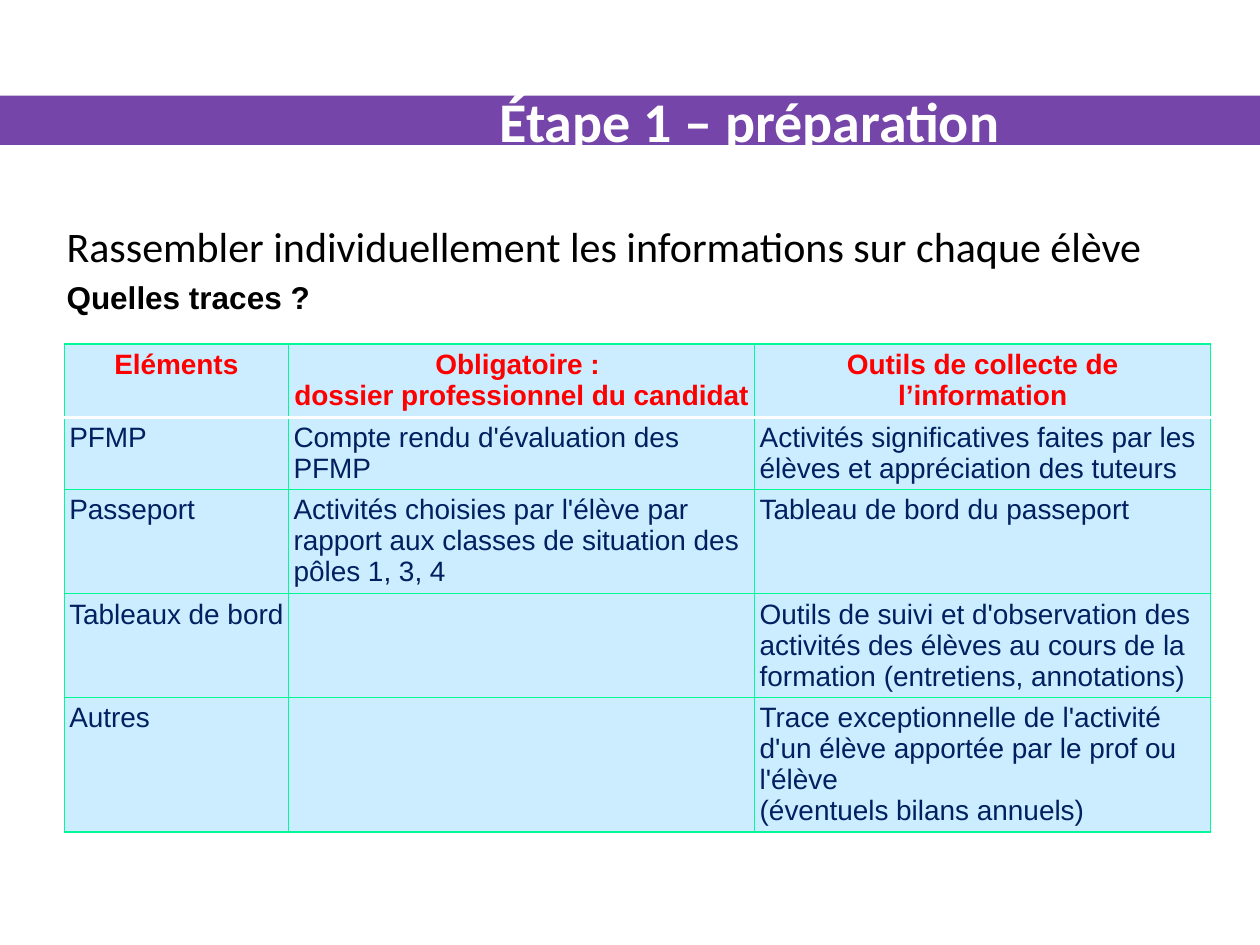
import pptx
import pptx.util
import pptx.dml.color
import pptx.enum.shapes
import pptx.enum.text
import pptx.oxml
import pptx.oxml.ns

Inches, Pt = pptx.util.Inches, pptx.util.Pt
RGB = pptx.dml.color.RGBColor
ALIGN = pptx.enum.text.PP_ALIGN
ANCHOR = pptx.enum.text.MSO_ANCHOR

PURPLE = RGB(0x75, 0x45, 0xA9)
WHITE = RGB(0xFF, 0xFF, 0xFF)
BLACK = RGB(0, 0, 0)
RED = RGB(0xFF, 0, 0)
NAVY = RGB(0, 0x20, 0x60)
PALE_BLUE = RGB(0xCC, 0xEC, 0xFF)
GREEN = RGB(0, 0xF9, 0x96)

TITLE = "Étape 1 – préparation"
INTRO = "Rassembler individuellement les informations sur chaque élève"
QUESTION = "Quelles traces ?"
ROWS = [
    ("Eléments", "Obligatoire : \vdossier professionnel du candidat",
     "Outils de collecte de l’information"),
    ("PFMP", "Compte rendu d'évaluation des PFMP",
     "Activités significatives faites par les élèves et appréciation des tuteurs"),
    ("Passeport",
     "Activités choisies par l'élève par rapport aux classes de situation des pôles 1, 3, 4",
     "Tableau de bord du passeport"),
    ("Tableaux de bord", "",
     "Outils de suivi et d'observation des activités des élèves au cours de la "
     "formation (entretiens, annotations)"),
    ("Autres", "",
     "Trace exceptionnelle de l'activité d'un élève apportée par le prof ou l'élève\n"
     "(éventuels bilans annuels)"),
]
COL_WIDTHS = (1.78, 3.7, 3.62)
ROW_HEIGHTS = (0.58, 0.57, 0.83, 0.82, 1.07)
TABLE_LEFT, TABLE_TOP = 0.51, 2.73
BAND_TOP, BAND_HEIGHT = 0.76, 0.39
CELL_MARGIN = 0.04


def style(tf, font, size, color, bold=False, align=ALIGN.LEFT):
    for p in tf.paragraphs:
        p.alignment = align
        p.font.size = Pt(size)
        for r in p.runs:
            r.font.name = font
            r.font.size = Pt(size)
            r.font.bold = bold
            r.font.color.rgb = color


def add_text(s, box, text, anchor=ANCHOR.TOP, **look):
    sp = s.shapes.add_textbox(*map(Inches, box))
    tf = sp.text_frame
    tf.word_wrap = True
    tf.vertical_anchor = anchor
    tf.text = text
    style(tf, **look)
    return sp


def set_borders(cell, borders):
    tcPr = cell._tc.get_or_add_tcPr()
    for i, (side, color, width) in enumerate(borders):
        tcPr.insert(i, pptx.oxml.parse_xml(
            f'<a:ln{side} {pptx.oxml.ns.nsdecls("a")} w="{Pt(width)}">'
            f'<a:solidFill><a:srgbClr val="{color}"/></a:solidFill></a:ln{side}>'))


def add_table(s):
    table = s.shapes.add_table(
        len(ROWS), len(COL_WIDTHS), Inches(TABLE_LEFT), Inches(TABLE_TOP),
        Inches(sum(COL_WIDTHS)), Inches(sum(ROW_HEIGHTS))).table
    for column, width in zip(table.columns, COL_WIDTHS):
        column.width = Inches(width)
    for i, (texts, height) in enumerate(zip(ROWS, ROW_HEIGHTS)):
        table.rows[i].height = Inches(height)
        header = i == 0
        for j, text in enumerate(texts):
            cell = table.cell(i, j)
            cell.margin_left = cell.margin_right = Inches(CELL_MARGIN)
            cell.margin_top = cell.margin_bottom = Inches(CELL_MARGIN)
            cell.fill.solid()
            cell.fill.fore_color.rgb = PALE_BLUE
            cell.text = text
            style(cell.text_frame, "Arial", 16, RED if header else NAVY, header,
                  ALIGN.CENTER if header else ALIGN.LEFT)
            thin, thick = (GREEN, 0.75), (WHITE, 2)
            set_borders(cell, [("L", *thin), ("R", *thin),
                               ("T", *(thick if i == 1 else thin)),
                               ("B", *(thick if header else thin))])


def main():
    prs = pptx.Presentation()
    prs.slide_width, prs.slide_height = Inches(10), Inches(7.5)
    s = prs.slides.add_slide(prs.slide_layouts[6])

    band = s.shapes.add_shape(pptx.enum.shapes.MSO_SHAPE.RECTANGLE, 0,
                              Inches(BAND_TOP), prs.slide_width, Inches(BAND_HEIGHT))
    band.shadow.inherit = False
    band.fill.solid()
    band.fill.fore_color.rgb = PURPLE
    band.line.fill.background()

    add_table(s)
    question = add_text(s, (0.43, 2.16, 2.68, 0.4), QUESTION,
                        font="Arial", size=18, color=BLACK, bold=True)
    question.fill.solid()
    question.fill.fore_color.rgb = WHITE
    add_text(s, (2.4, BAND_TOP, 7.1, BAND_HEIGHT), TITLE, ANCHOR.MIDDLE,
             font="Calibri", size=32, color=WHITE, bold=True, align=ALIGN.CENTER)
    add_text(s, (0.43, 1.7, 9, 4.95), INTRO, font="Calibri", size=24, color=BLACK)
    prs.save("out.pptx")


if __name__ == "__main__":
    main()
